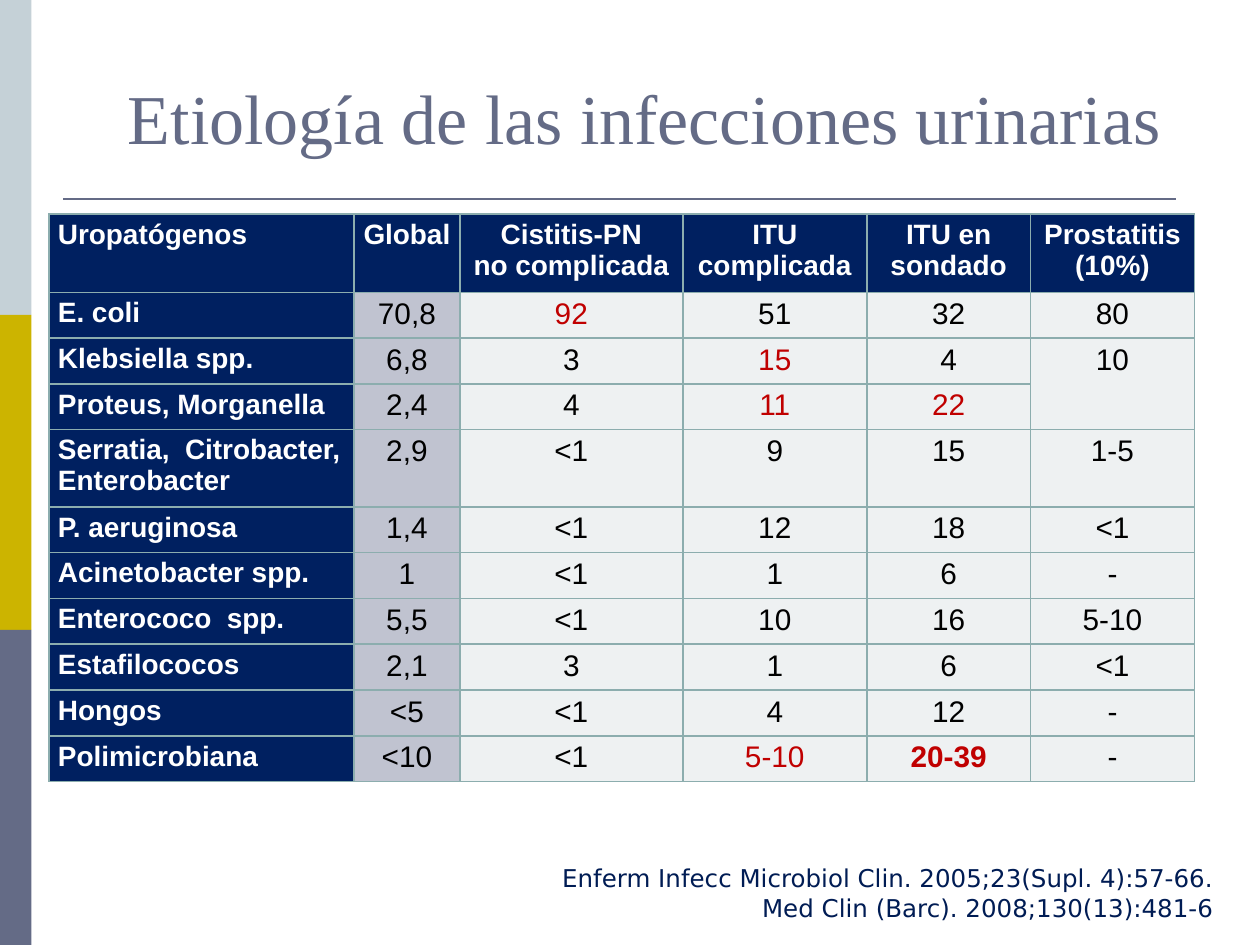
import pptx
import pptx.dml.color
import pptx.enum.shapes
import pptx.enum.text
import pptx.oxml
import pptx.oxml.ns
import pptx.util

Inches = pptx.util.Inches
PP_ALIGN = pptx.enum.text.PP_ALIGN
ANCHOR = pptx.enum.text.MSO_ANCHOR
SLATE, NAVY, WHITE, RED, BLACK = "646B86", "002060", "FFFFFF", "C00000", "000000"


def rgb(value):
    return pptx.dml.color.RGBColor.from_string(value)


def write(tf, lines, size, font, color, align, bold=False):
    """Fill a text frame with one paragraph per line."""
    for i, line in enumerate(lines):
        p = tf.paragraphs[0] if i == 0 else tf.add_paragraph()
        p.alignment = align
        r = p.add_run()
        r.text = line
        r.font.size = pptx.util.Pt(size)
        r.font.name = font
        r.font.bold = bold
        r.font.color.rgb = rgb(color)


prs = pptx.Presentation()
prs.slide_width, prs.slide_height = Inches(10), Inches(7.5)
s = prs.slides.add_slide(prs.slide_layouts[6])

# Side band and title rule
for i, color in enumerate(["C5D1D7", "CCB400", SLATE]):
    sp = s.shapes.add_shape(pptx.enum.shapes.MSO_SHAPE.RECTANGLE,
                            0, Inches(2.5 * i), Inches(0.25), Inches(2.5))
    sp.shadow.inherit = False
    sp.fill.solid()
    sp.fill.fore_color.rgb = rgb(color)
    sp.line.fill.background()

rule = s.shapes.add_connector(pptx.enum.shapes.MSO_CONNECTOR.STRAIGHT,
                              Inches(0.5), Inches(1.58), Inches(9.33), Inches(1.58))
rule.line.color.rgb = rgb(SLATE)
rule.line.width = pptx.util.Pt(1.5)
rule._element.spPr.append(pptx.oxml.parse_xml(
    f'<a:effectLst {pptx.oxml.ns.nsdecls("a")}/>'))

# Title and references
texts = [
    ((0.5, 0.39, 9.23, 0.92), ANCHOR.BOTTOM, ["Etiología de las infecciones urinarias"],
     40, "Times New Roman", SLATE, PP_ALIGN.CENTER),
    ((0.43, 6.8, 9.3, 0.57), ANCHOR.MIDDLE,
     ["Enferm Infecc Microbiol Clin. 2005;23(Supl. 4):57-66.",
      "Med Clin (Barc). 2008;130(13):481-6"],
     14, "DejaVu Sans", "001C54", PP_ALIGN.RIGHT),
]
for box, anchor, *content in texts:
    tf = s.shapes.add_textbox(*map(Inches, box)).text_frame
    tf.word_wrap = True
    tf.vertical_anchor = anchor
    write(tf, *content)

# Table of uropathogens (percentages)
rows = [
    ["Uropatógenos", "Global", "Cistitis-PN\nno complicada", "ITU complicada",
     "ITU en sondado", "Prostatitis (10%)"],
    ["E. coli", "70,8", "92", "51", "32", "80"],
    ["Klebsiella spp.", "6,8", "3", "15", "4", "10"],
    ["Proteus, Morganella", "2,4", "4", "11", "22", ""],
    ["Serratia,  Citrobacter, Enterobacter", "2,9", "<1", "9", "15", "1-5"],
    ["P. aeruginosa", "1,4", "<1", "12", "18", "<1"],
    ["Acinetobacter spp.", "1", "<1", "1", "6", "-"],
    ["Enterococo  spp.", "5,5", "<1", "10", "16", "5-10"],
    ["Estafilococos", "2,1", "3", "1", "6", "<1"],
    ["Hongos", "<5", "<1", "4", "12", "-"],
    ["Polimicrobiana", "<10", "<1", "5-10", "20-39", "-"],
]
col_widths = [2.42, 0.84, 1.77, 1.46, 1.3, 1.3]
tall_rows = {0: 0.62, 4: 0.61}
red_cells = {(1, 2), (2, 3), (3, 3), (3, 4), (10, 3), (10, 4)}
bold_value = (10, 4)

table = s.shapes.add_table(len(rows), len(col_widths), Inches(0.39), Inches(1.7),
                           Inches(9.1), Inches(4.49)).table
for column, width in zip(table.columns, col_widths):
    column.width = Inches(width)
table.cell(2, 5).merge(table.cell(3, 5))

for i, row in enumerate(rows):
    table.rows[i].height = Inches(tall_rows.get(i, 0.36))
    for j, text in enumerate(row):
        cell = table.cell(i, j)
        heading = i == 0 or j == 0
        cell.margin_left = cell.margin_right = Inches(0.07)
        cell.margin_top = cell.margin_bottom = Inches(0.04)
        for side in ("L", "R", "T", "B"):
            cell._tc.get_or_add_tcPr().append(pptx.oxml.parse_xml(
                f'<a:ln{side} {pptx.oxml.ns.nsdecls("a")} w="12700"><a:solidFill>'
                f'<a:srgbClr val="8CADAE"/></a:solidFill></a:ln{side}>'))
        cell.fill.solid()
        cell.fill.fore_color.rgb = rgb(NAVY if heading else "C0C3D0" if j == 1 else "EEF1F2")
        if text:
            color = WHITE if heading else RED if (i, j) in red_cells else BLACK
            write(cell.text_frame, text.split("\n"), 16 if heading else 17, "Arial", color,
                  PP_ALIGN.LEFT if j == 0 else PP_ALIGN.CENTER,
                  heading or (i, j) == bold_value)

prs.save("out.pptx")
